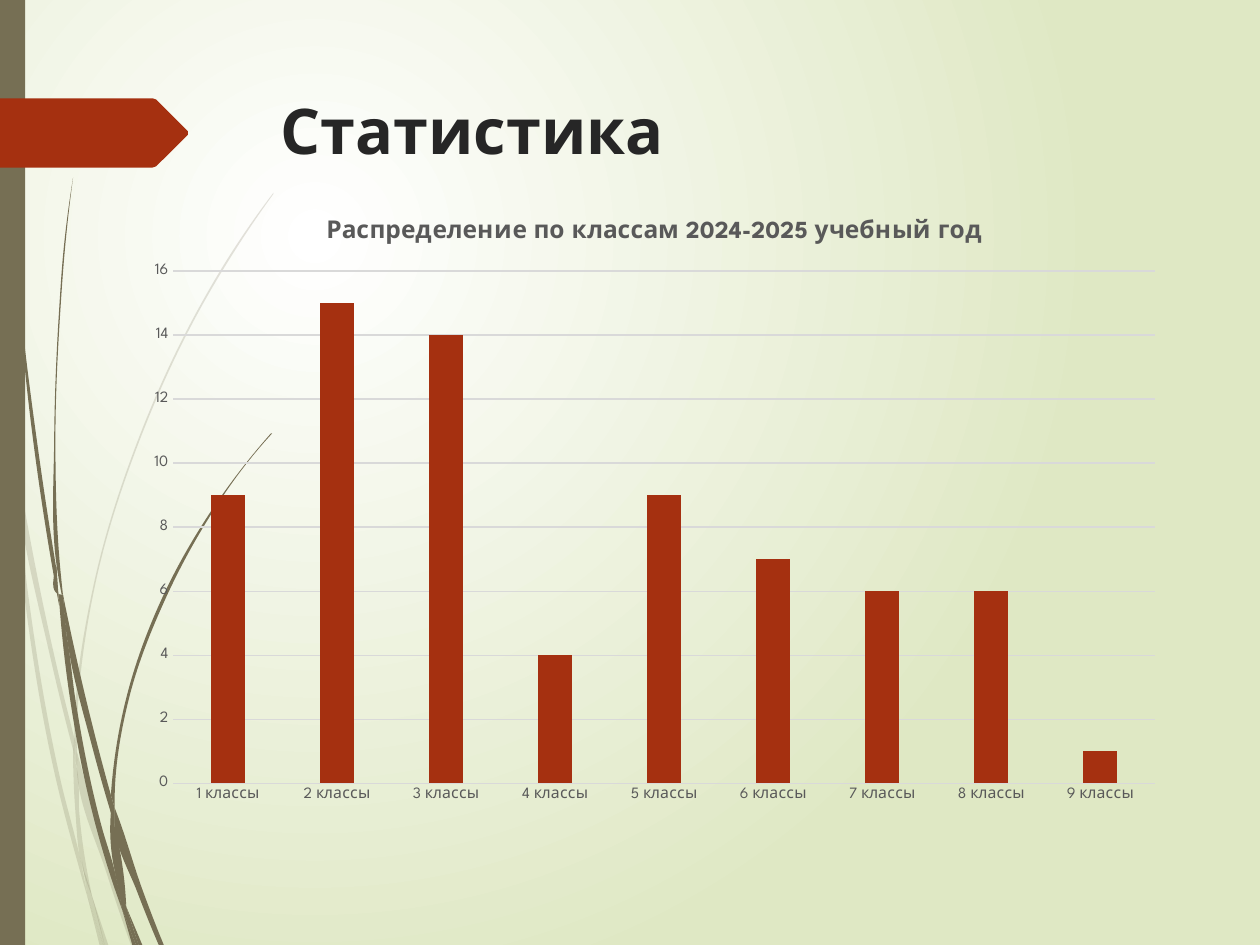
from pptx import Presentation
from pptx.chart.data import CategoryChartData
from pptx.dml.color import RGBColor
from pptx.enum.chart import XL_CHART_TYPE, XL_TICK_MARK
from pptx.enum.shapes import MSO_SHAPE
from pptx.enum.text import MSO_ANCHOR
from pptx.oxml.ns import qn
from pptx.util import Inches, Pt
from lxml.etree import SubElement

FONT = "League Spartan"
COLORS = {"stem": "766F54", "accent": "A53010", "title": "262626", "label": "595959",
          "grid": "D9D9D9", "center": "FFFFFF", "edge": "DFE8C4"}
WIDTH, HEIGHT = 10, 7.5

TITLE = "Статистика"
CHART_TITLE = "Распределение по классам 2024-2025 учебный год"
PUPILS_BY_GRADE = [9, 15, 14, 4, 9, 7, 6, 6, 1]

# Each blade of grass is a pair of edges, in inches, that together run round its outline.
FAINT_BLADES = [
    ([(.08, 3.5), (.06, 3.22), (0, 2.82)], [(0, 2.99), (.07, 3.44), (.08, 3.5)]),
    ([(.1, 3.45), (.12, 3.76), (.4, 5.22), (.59, 5.99)], [(.59, 5.86), (.43, 5.2), (.1, 3.45)]),
    ([(.61, 5.96), (.61, 6.1), (.85, 6.94), (1.04, 7.5)],
     [(1.08, 7.5), (.88, 6.92), (.64, 6.07), (.61, 5.96)]),
    ([(.83, 7.5), (.86, 7.5)], [(.73, 7.11), (.83, 7.5)]),
    ([(.7, 7.14), (.64, 6.83), (.48, 6.19), (.22, 4.69), (.12, 3.76), (.08, 3.5)],
     [(.08, 3.5), (.19, 4.7), (.45, 6.21), (.64, 6.93), (.7, 7.14)]),
    ([(.58, 5.99), (.6, 6.46), (.64, 6.83), (.73, 7.11)],
     [(.72, 7.06), (.63, 6.46), (.61, 6.1), (.58, 5.99)]),
    ([(.61, 5.96), (.61, 5.84), (.76, 4.62), (1.11, 3.49), (1.59, 2.45), (1.87, 1.98),
      (2.17, 1.54)],
     [(2.17, 1.53), (1.86, 1.97), (1.58, 2.44), (1.1, 3.48), (.75, 4.61), (.59, 5.84),
      (.59, 5.86)]),
    ([(.7, 7.14), (.79, 7.5)], [(.82, 7.5), (.7, 7.14)]),
    ([(.61, 6.1), (.61, 5.96), (.59, 5.86)], [(.58, 5.99), (.61, 6.08)]),
    ([(.67, 6.92), (.65, 6.83)], [(.7, 7.14), (.82, 7.5)], [(.83, 7.5), (.73, 7.11), (.67, 6.92)]),
]
DARK_BLADES = [
    ([(.02, 0), (.03, .48), (.05, 1.1), (.14, 2.33), (.27, 3.55), (.47, 4.81)],
     [(.45, 4.53), (.3, 3.55), (.15, 2.32), (.06, 1.09), (.04, .48), (.03, 0)]),
    ([(.5, 4.72), (.53, 5.05), (.73, 5.92), (.88, 6.45)], [(.88, 6.31), (.77, 5.9), (.5, 4.72)]),
    ([(.91, 6.41), (.91, 6.56), (1.09, 7.08), (1.26, 7.5)],
     [(1.3, 7.5), (1.13, 7.06), (.94, 6.49), (.91, 6.41)]),
    ([(.97, 7.22), (.91, 6.91), (.81, 6.57), (.6, 5.56), (.53, 5.05), (.47, 4.77)],
     [(.47, 4.77), (.56, 5.57), (.77, 6.59), (.92, 7.08), (.97, 7.22)]),
    ([(.5, 4.72), (.48, 4.53), (.44, 3.49), (.48, 2.45), (.52, 1.93), (.58, 1.41)],
     [(.58, 1.41), (.51, 1.93), (.47, 2.45), (.43, 3.49), (.45, 4.49), (.49, 4.72)]),
    ([(1, 7.19), (1.1, 7.5)], [(1.13, 7.5), (1, 7.19)]),
    ([(.45, 4.49), (.47, 4.77), (.53, 5.05)], [(.5, 4.72), (.49, 4.72), (.45, 4.49)]),
    ([(.91, 6.41), (.91, 6.33), (1.03, 5.52), (1.31, 4.76), (1.69, 4.06), (1.91, 3.74),
      (2.16, 3.44)],
     [(2.15, 3.44), (1.91, 3.73), (1.68, 4.05), (1.29, 4.74), (1.01, 5.51), (.88, 6.31)]),
    ([(.97, 7.22), (1.05, 7.5)], [(1.08, 7.5), (.97, 7.22)]),
    ([(.88, 6.45), (.91, 6.91), (1, 7.19)], [(1, 7.16), (.91, 6.56), (.88, 6.45)]),
    ([(.88, 6.31), (.88, 6.45), (.91, 6.56)], [(.91, 6.41), (.88, 6.31)]),
    ([(.96, 7.06), (.91, 6.91)], [(.97, 7.22), (1.08, 7.5)], [(1.1, 7.5), (1, 7.19), (.96, 7.06)]),
]
ARROW = [(0, .78), (1.21, .78), (1.24, .79), (1.49, 1.04), (1.49, 1.07),
         (1.24, 1.32), (1.21, 1.33), (0, 1.33)]


def rgb(name):
    return RGBColor.from_string(COLORS[name])


def style_font(font, size, color, bold=False):
    font.name, font.size, font.bold = FONT, Pt(size), bold
    font.color.rgb = rgb(color)


def paint(shape, color, opacity=None):
    shape.shadow.inherit = False
    shape.fill.solid()
    shape.fill.fore_color.rgb = rgb(color)
    shape.line.fill.background()
    if opacity:
        color_element = shape._element.spPr.find(qn("a:solidFill"))[0]
        SubElement(color_element, qn("a:alpha"), val=str(opacity * 1000))


def add_outline(shapes, points, color, opacity=None):
    corners = [(Inches(x), Inches(y)) for x, y in points]
    builder = shapes.build_freeform(*corners[0])
    builder.add_line_segments(corners[1:], close=True)
    shape = builder.convert_to_shape()
    paint(shape, color, opacity)
    return shape


def edge_controls(edge):
    """The two Bezier control points of every segment of a smooth edge."""
    points = [complex(x, y) for x, y in edge]
    steps = [end - start for start, end in zip(points, points[1:])]
    units = [step / abs(step) for step in steps]
    inner = [(u * abs(after) + v * abs(before)) / (abs(before) + abs(after))
             for u, v, before, after in zip(units, units[1:], steps, steps[1:])]
    if inner:
        tangents = [2 * units[0] - inner[0], *inner, 2 * units[-1] - inner[-1]]
    else:
        tangents = units * 2
    return [(start + leave * abs(step) / 3, end - arrive * abs(step) / 3)
            for start, end, step, leave, arrive
            in zip(points, points[1:], steps, tangents, tangents[1:])]


def add_blade(shapes, edges, opacity):
    shape = add_outline(shapes, [point for edge in edges for point in edge], "stem", opacity)
    lines = shape._element.findall(".//" + qn("a:lnTo"))
    left, top = min(x for e in edges for x, y in e), min(y for e in edges for x, y in e)
    controls = []
    for edge in edges:
        controls += [*edge_controls(edge), None]
    for line, pair in zip(lines, controls):
        if pair:
            line.tag = qn("a:cubicBezTo")
            for index, control in enumerate(pair):
                point = SubElement(line, qn("a:pt"), x=str(Inches(control.real - left)),
                                   y=str(Inches(control.imag - top)))
                line.insert(index, point)


def add_background(slide):
    fill = slide.background.fill
    fill.gradient()
    for stop, position, color in zip(fill.gradient_stops, (0, 1), ("center", "edge")):
        stop.position = position
        stop.color.rgb = rgb(color)
    gradient = slide._element.find(".//" + qn("a:gradFill"))
    for linear in gradient.findall(qn("a:lin")):
        gradient.remove(linear)
    circle = SubElement(gradient, qn("a:path"), path="circle")
    SubElement(circle, qn("a:fillToRect"), l="50000", t="50000", r="100000", b="100000")


def add_decoration(slide):
    for blades, opacity in ((FAINT_BLADES, 20), (DARK_BLADES, None)):
        group = slide.shapes.add_group_shape()
        for edges in blades:
            add_blade(group.shapes, edges, opacity)
    side_bar = slide.shapes.add_shape(MSO_SHAPE.RECTANGLE, 0, 0, Inches(WIDTH * .02), Inches(HEIGHT))
    paint(side_bar, "stem")
    add_outline(slide.shapes, ARROW, "accent")


def add_title(slide):
    box = slide.shapes.add_textbox(Inches(2.13), Inches(.68), Inches(7.21), Inches(1.4))
    frame = box.text_frame
    frame.word_wrap = True
    frame.vertical_anchor = MSO_ANCHOR.TOP
    frame.text = TITLE
    style_font(frame.paragraphs[0].runs[0].font, 36, "title", bold=True)


def add_grade_chart(slide):
    data = CategoryChartData()
    data.categories = [f"{grade} классы" for grade in range(1, len(PUPILS_BY_GRADE) + 1)]
    data.add_series("Series 1", PUPILS_BY_GRADE)
    chart = slide.shapes.add_chart(XL_CHART_TYPE.COLUMN_CLUSTERED, Inches(1.06), Inches(1.55),
                                   Inches(8.27), Inches(4.92), data).chart
    chart.has_legend = False
    style_font(chart.font, 10, "label")
    title = chart.chart_title.text_frame
    title.text = CHART_TITLE
    style_font(title.paragraphs[0].runs[0].font, 14, "label", bold=True)

    plot = chart.plots[0]
    plot.gap_width, plot.overlap, plot.vary_by_categories = 219, -27, False
    bars = plot.series[0].format
    bars.fill.solid()
    bars.fill.fore_color.rgb = rgb("accent")

    values, categories = chart.value_axis, chart.category_axis
    for axis in (values, categories):
        axis.major_tick_mark = axis.minor_tick_mark = XL_TICK_MARK.NONE
        style_font(axis.tick_labels.font, 9, "label")
    values.format.line.fill.background()
    for line in (values.major_gridlines.format.line, categories.format.line):
        line.color.rgb = rgb("grid")
        line.width = Pt(.75)


def main():
    presentation = Presentation()
    presentation.slide_width, presentation.slide_height = Inches(WIDTH), Inches(HEIGHT)
    slide = presentation.slides.add_slide(presentation.slide_layouts[6])
    add_background(slide)
    add_decoration(slide)
    add_title(slide)
    add_grade_chart(slide)
    presentation.save("out.pptx")


if __name__ == "__main__":
    main()
